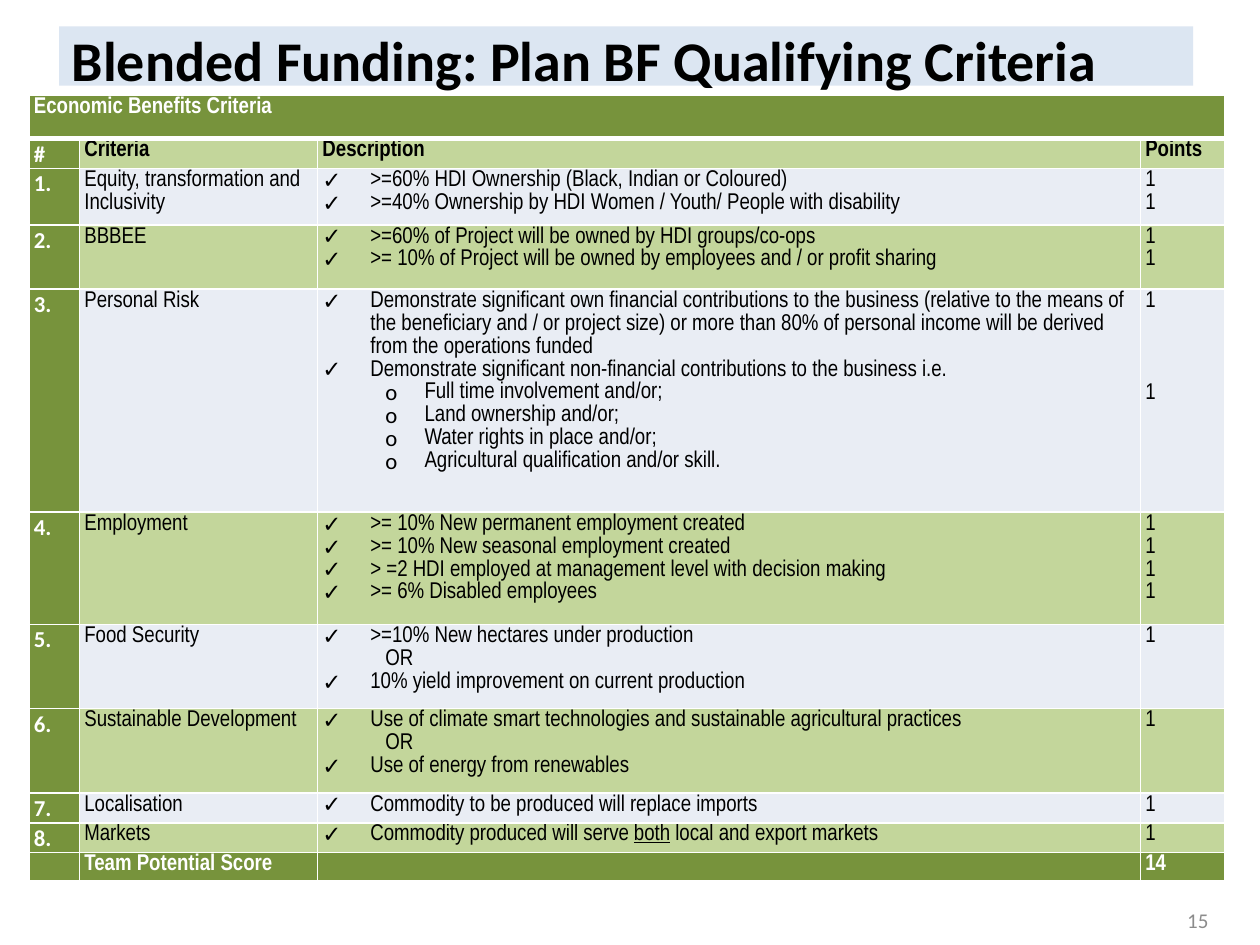
"""Build the slide of blended funding qualifying criteria."""
import pptx
import pptx.dml.color
import pptx.enum.text
import pptx.oxml
import pptx.oxml.ns
import pptx.util
from pptx.util import Inches

COLORS = {
    "white": "FFFFFF", "black": "000000", "dark": "77933C", "green": "C3D69B",
    "pale": "E9EDF4", "banner": "DCE6F2", "number": "8C8C8C",
}
NARROW, CALIBRI = "Arial Narrow", "Calibri"
COLUMN_WIDTHS = [0.4, 1.89, 6.53, 0.67]
ROW_HEIGHTS = [0.34, 0.22, 0.45, 0.51, 1.77, 0.89, 0.67, 0.67, 0.22, 0.22, 0.22]
INDENTS = {"check": (0.38, -0.38, "✓"), "circle": (0.81, -0.31, "o"), "or": (0.5, 0, None)}
SKIPPED_LINES = 39.4

CRITERIA = [
    ("Equity, transformation and Inclusivity",
     [("check", ">=60% HDI Ownership (Black, Indian or Coloured)"),
      ("check", ">=40% Ownership by HDI Women / Youth/ People with disability")], 2),
    ("BBBEE",
     [("check", ">=60% of Project will be owned by HDI groups/co-ops"),
      ("check", ">= 10% of Project will be owned by employees and / or profit sharing")], 2),
    ("Personal Risk",
     [("check", "Demonstrate significant own financial contributions to the business "
       "(relative to the means of the beneficiary and / or project size) or more than 80% "
       "of personal income will be derived from the operations funded"),
      ("check", "Demonstrate significant non-financial contributions to the business i.e."),
      ("circle", "Full time involvement and/or;"),
      ("circle", "Land ownership and/or;"),
      ("circle", "Water rights in place and/or;"),
      ("circle", "Agricultural qualification and/or skill.")], 2),
    ("Employment",
     [("check", ">= 10% New permanent employment created"),
      ("check", ">= 10% New seasonal employment created"),
      ("check", "> =2 HDI employed at management level with decision making"),
      ("check", ">= 6% Disabled employees")], 4),
    ("Food Security",
     [("check", ">=10% New hectares under production"),
      ("or", "OR"),
      ("check", "10% yield improvement on current production")], 1),
    ("Sustainable Development",
     [("check", "Use of climate smart technologies and sustainable agricultural practices"),
      ("or", "OR"),
      ("check", "Use of energy from renewables")], 1),
    ("Localisation", [("check", "Commodity to be produced will replace imports")], 1),
    ("Markets", [("check", "Commodity produced will serve _both_ local and export markets")], 1),
]


def rgb(color):
    """Return the named colour."""
    return pptx.dml.color.RGBColor.from_string(COLORS[color])


def add_run(paragraph, text, size, font, color, bold=False):
    """Add one formatted run to a paragraph."""
    run = paragraph.add_run()
    run.text = text
    run.font.size = pptx.util.Pt(size)
    run.font.name = font
    run.font.bold = bold
    run.font.color.rgb = rgb(color)
    return run


def set_indent(paragraph, kind):
    """Give a description line its indent and bullet."""
    left, hanging, bullet = INDENTS[kind]
    properties = paragraph._p.get_or_add_pPr()
    properties.set("marL", str(Inches(left)))
    properties.set("indent", str(Inches(hanging)))
    if bullet:
        paragraph.level = 1 if kind == "circle" else 0
        for tag, key, value in (("buFont", "typeface", CALIBRI), ("buChar", "char", bullet)):
            mark = pptx.oxml.parse_xml(f'<a:{tag} {pptx.oxml.ns.nsdecls("a")} {key}="{value}"/>')
            properties.append(mark)


def style_cell(cell, fill, bottom=1):
    """Set the margins, white borders and fill of a cell."""
    cell.margin_left = cell.margin_right = Inches(0.04)
    cell.margin_top = cell.margin_bottom = 0
    properties = cell._tc.get_or_add_tcPr()
    for side, width in (("L", 1), ("R", 1), ("T", 1), ("B", bottom)):
        properties.append(pptx.oxml.parse_xml(
            f'<a:ln{side} {pptx.oxml.ns.nsdecls("a")} w="{pptx.util.Pt(width)}"><a:solidFill>'
            f'<a:srgbClr val="{COLORS["white"]}"/></a:solidFill></a:ln{side}>'))
    cell.fill.solid()
    cell.fill.fore_color.rgb = rgb(fill)


def write_cell(cell, lines, fill, font=NARROW, color="black", bold=False, bottom=1):
    """Write lines of (kind, text) in a cell, underlining text between underscores."""
    style_cell(cell, fill, bottom)
    frame = cell.text_frame
    for index, (kind, text) in enumerate(lines):
        paragraph = frame.add_paragraph() if index else frame.paragraphs[0]
        paragraph.line_spacing = 1.07
        if kind:
            set_indent(paragraph, kind)
        for position, part in enumerate(text.split("_")):
            run = add_run(paragraph, part, 13, font, color, bold)
            if position % 2:
                run.font.underline = True
    if not lines:
        frame.paragraphs[0]._p.append(
            pptx.oxml.parse_xml(f'<a:endParaRPr {pptx.oxml.ns.nsdecls("a")} sz="1300"/>'))


def write_plain(cell, text, fill, **style):
    """Write a single unindented line in a cell."""
    write_cell(cell, [(None, text)] if text else [], fill, **style)


def add_criteria_table(slide):
    """Add the table of criteria, descriptions and points."""
    criteria_table = slide.shapes.add_table(
        len(ROW_HEIGHTS), len(COLUMN_WIDTHS), Inches(0.23), Inches(0.76),
        Inches(sum(COLUMN_WIDTHS)), Inches(sum(ROW_HEIGHTS))).table
    criteria_table.first_row = criteria_table.horz_banding = False
    for column, width in zip(criteria_table.columns, COLUMN_WIDTHS):
        column.width = Inches(width)
    for row, height in zip(criteria_table.rows, ROW_HEIGHTS):
        row.height = Inches(height)

    for column in range(1, 4):
        style_cell(criteria_table.cell(0, column), "dark", 3)
    heading = criteria_table.cell(0, 0)
    heading.merge(criteria_table.cell(0, 3))
    write_plain(heading, "Economic Benefits Criteria", "dark", color="white", bold=True, bottom=3)

    numbering = dict(font=CALIBRI, color="white", bold=True)
    write_plain(criteria_table.cell(1, 0), "#", "dark", **numbering)
    for column, label in enumerate(["Criteria", "Description", "Points"], 1):
        write_plain(criteria_table.cell(1, column), label, "green", bold=True)

    for number, (criterion, description, points) in enumerate(CRITERIA, 1):
        row = number + 1
        band = "pale" if number % 2 else "green"
        write_plain(criteria_table.cell(row, 0), f"{number}.", "dark", **numbering)
        write_plain(criteria_table.cell(row, 1), criterion, band)
        write_cell(criteria_table.cell(row, 2), description, band)
        score = criteria_table.cell(row, 3)
        write_cell(score, [(None, "1")] * points, band)
        if criterion == "Personal Risk":
            score.text_frame.paragraphs[1].space_before = pptx.util.Pt(SKIPPED_LINES)

    for column, total in enumerate(["", "Team Potential Score", "", "14"]):
        write_plain(criteria_table.cell(10, column), total, "dark", color="white", bold=True)


def add_title(slide):
    """Fill the title placeholder as a banner."""
    title = slide.shapes.title
    title.left, title.top, title.width, title.height = map(Inches, (0.47, 0.21, 9, 0.47))
    title.fill.solid()
    title.fill.fore_color.rgb = rgb("banner")
    frame = title.text_frame
    frame.word_wrap = True
    frame.auto_size = pptx.enum.text.MSO_AUTO_SIZE.NONE
    frame.vertical_anchor = pptx.enum.text.MSO_ANCHOR.TOP
    paragraph = frame.paragraphs[0]
    paragraph.alignment = pptx.enum.text.PP_ALIGN.LEFT
    paragraph.line_spacing = 0.9
    add_run(paragraph, "Blended Funding: Plan BF Qualifying Criteria", 32, CALIBRI, "black", True)


def add_page_number(slide):
    """Add the page number at the lower right."""
    page_number = slide.shapes.add_textbox(*map(Inches, (7.36, 7.1, 2.33, 0.4)))
    frame = page_number.text_frame
    frame.word_wrap = True
    frame.vertical_anchor = pptx.enum.text.MSO_ANCHOR.MIDDLE
    frame.paragraphs[0].alignment = pptx.enum.text.PP_ALIGN.RIGHT
    add_run(frame.paragraphs[0], "15", 12, CALIBRI, "number")


def main():
    """Build and save the slide."""
    deck = pptx.Presentation()
    deck.slide_width, deck.slide_height = Inches(10), Inches(7.5)
    slide = deck.slides.add_slide(deck.slide_layouts[5])
    add_criteria_table(slide)
    add_title(slide)
    add_page_number(slide)
    deck.save("out.pptx")


if __name__ == "__main__":
    main()
